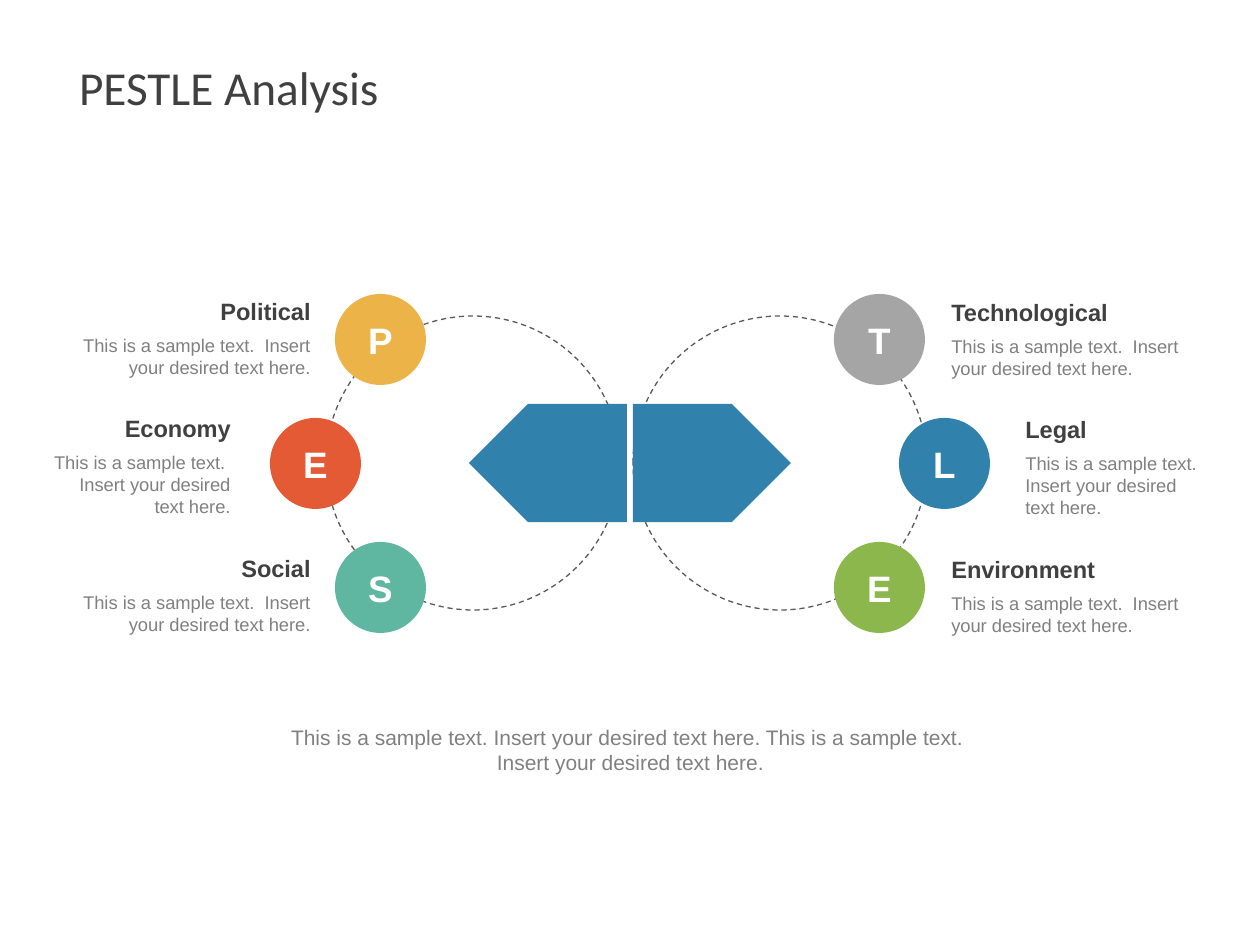
from pptx import Presentation
from pptx.dml.color import RGBColor
from pptx.enum.dml import MSO_LINE
from pptx.enum.shapes import MSO_SHAPE
from pptx.enum.text import MSO_ANCHOR, MSO_AUTO_SIZE, PP_ALIGN
from pptx.util import Pt

# Content: letter, heading, circle colour; top to bottom on each side
LEFT_FACTORS = [("P", "Political", "ECB448"),
                ("E", "Economy", "E35A35"),
                ("S", "Social", "5FB7A2")]
RIGHT_FACTORS = [("T", "Technological", "A5A5A5"),
                 ("L", "Legal", "3081AC"),
                 ("E", "Environment", "8BB74C")]
SAMPLE = "This is a sample text.  Insert your desired text here."
SUMMARY = "This is a sample text. Insert your desired text here. " + SAMPLE

DARK, GREY, WHITE, BLUE = "404040", "808080", "FFFFFF", "3081AC"

# Layout in px, 126 to the inch
EMU_PER_PX = 914400 / 126
SLIDE_W, SLIDE_H = 1260, 945
CIRCLE, CIRCLE_TOP, CIRCLE_STEP = 91, 294, 124
CIRCLE_LEFTS = [335, 270, 335]
HEADING_TOPS = [291, 408, 548]
HEADING_H, BODY_OFFSET = 42, 37
BODY_HEIGHTS = [57, 79, 57]
TEXT_WIDTHS = [263, 205, 263]
LEFT_TEXT_X = [60, 38, 60]
RIGHT_TEXT_X = [939, 1013, 939]


def px(length):
    return round(length * EMU_PER_PX)


def box(*lengths):
    return [px(length) for length in lengths]


def color(hex_string):
    return RGBColor.from_string(hex_string)


def write(shape, text, size, ink, font="Arial", bold=False,
          align=PP_ALIGN.LEFT, anchor=MSO_ANCHOR.TOP, grow=False):
    frame = shape.text_frame
    frame.word_wrap = True
    frame.vertical_anchor = anchor
    frame.auto_size = MSO_AUTO_SIZE.SHAPE_TO_FIT_TEXT if grow else MSO_AUTO_SIZE.NONE
    paragraph = frame.paragraphs[0]
    paragraph.alignment = align
    run = paragraph.add_run()
    run.text = text
    run.font.name, run.font.size, run.font.bold = font, Pt(size), bold
    run.font.color.rgb = color(ink)


def add_figure(shapes, preset, place, fill=None):
    figure = shapes.add_shape(preset, *box(*place))
    figure.shadow.inherit = False
    figure.line.fill.background()
    if fill:
        figure.fill.solid()
        figure.fill.fore_color.rgb = color(fill)
    else:
        figure.fill.background()
    return figure


def add_circles(shapes, factors, mirrored):
    for row, (letter, _, fill) in enumerate(factors):
        x = CIRCLE_LEFTS[row]
        if mirrored:
            x = SLIDE_W - x - CIRCLE
        y = CIRCLE_TOP + row * CIRCLE_STEP
        circle = add_figure(shapes, MSO_SHAPE.OVAL, (x, y, CIRCLE, CIRCLE), fill)
        write(circle, letter, 21, WHITE, bold=True,
              align=PP_ALIGN.CENTER, anchor=MSO_ANCHOR.MIDDLE)


def add_descriptions(shapes, factors, lefts, align, shift=0):
    for row, (_, name, _) in enumerate(factors):
        x, y, width = lefts[row], HEADING_TOPS[row] + shift, TEXT_WIDTHS[row]
        group = shapes.add_group_shape()
        heading = group.shapes.add_textbox(*box(x, y, width, HEADING_H))
        write(heading, name, 13.5, DARK, bold=True, align=align, grow=True)
        body = group.shapes.add_textbox(
            *box(x, y + BODY_OFFSET, width, BODY_HEIGHTS[row]))
        write(body, SAMPLE, 10.5, GREY, align=align, grow=True)


def main():
    deck = Presentation()
    deck.slide_width, deck.slide_height = box(SLIDE_W, SLIDE_H)
    slide = deck.slides.add_slide(deck.slide_layouts[5])
    shapes = slide.shapes

    # Title and summary
    title = shapes.title
    title.left, title.top, title.width, title.height = box(63, 38, 1134, 98)
    frame = title.text_frame
    frame.margin_left = frame.margin_right = px(16)
    frame.margin_top = frame.margin_bottom = px(9)
    write(title, "PESTLE Analysis", 27, DARK, font="Calibri",
          anchor=MSO_ANCHOR.MIDDLE)
    summary = shapes.add_textbox(*box(255, 718, 751, 63))
    write(summary, SUMMARY, 12, GREY, align=PP_ALIGN.CENTER, grow=True)

    # Dashed rings
    for x in (326, 633):
        ring = add_figure(shapes, MSO_SHAPE.OVAL, (x, 316, 294, 294))
        ring.line.color.rgb = color("595959")
        ring.line.width = Pt(0.75)
        ring.line.dash_style = MSO_LINE.DASH

    # Letter circles
    add_circles(shapes, LEFT_FACTORS, mirrored=False)
    add_circles(shapes, RIGHT_FACTORS, mirrored=True)

    # Central arrows, pointing outwards
    add_figure(shapes, MSO_SHAPE.PENTAGON, (633, 404, 158, 118), BLUE)
    left_arrow = add_figure(shapes, MSO_SHAPE.PENTAGON, (469, 404, 158, 118), BLUE)
    left_arrow._element.spPr.xfrm.set("flipH", "1")

    # Headings with descriptions
    add_descriptions(shapes, LEFT_FACTORS, LEFT_TEXT_X, PP_ALIGN.RIGHT)
    add_descriptions(shapes, RIGHT_FACTORS, RIGHT_TEXT_X, PP_ALIGN.LEFT, shift=1)

    deck.save("out.pptx")


if __name__ == "__main__":
    main()
